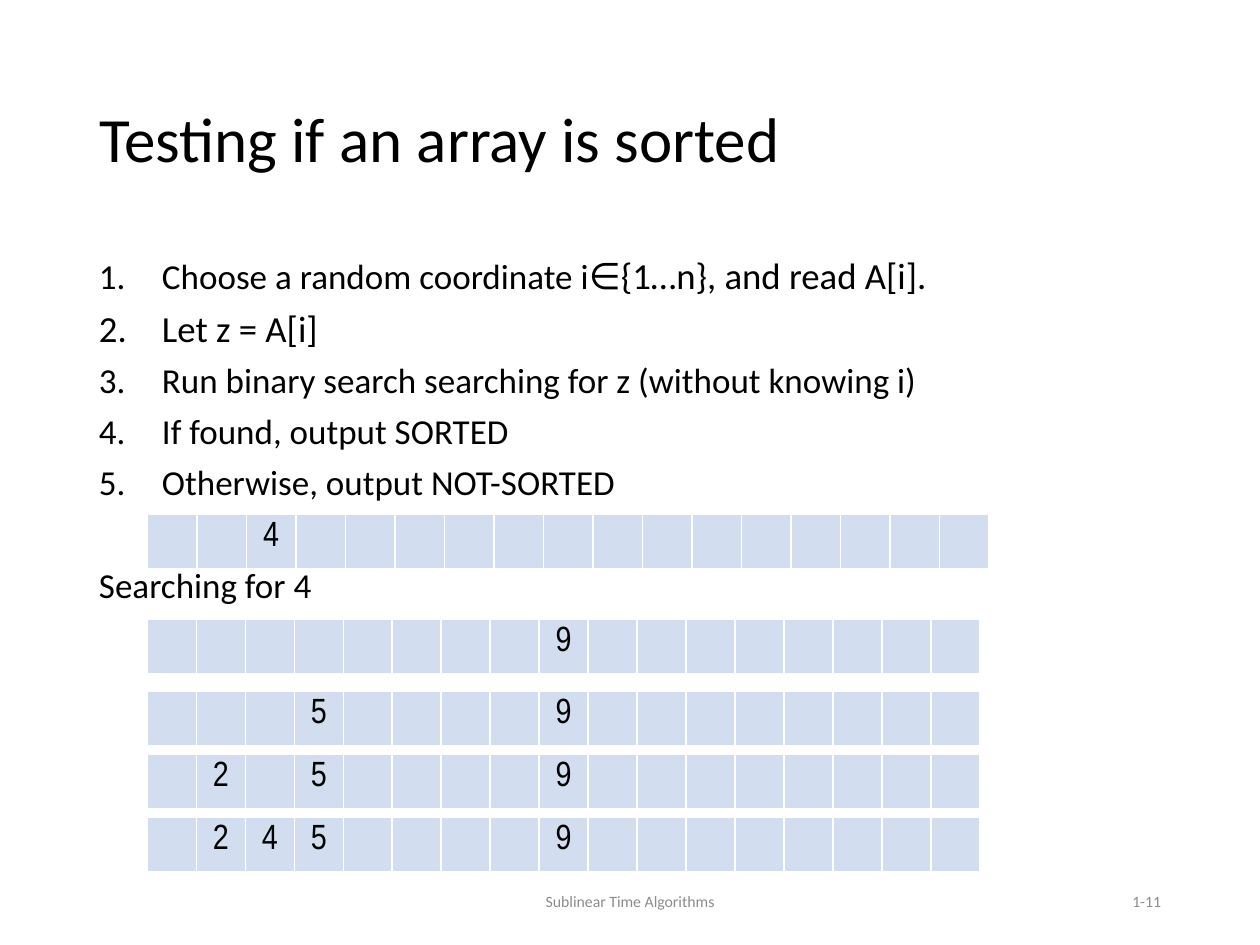
import pptx
import pptx.util
import pptx.dml.color
import pptx.enum.text
import pptx.oxml
import pptx.oxml.ns
from lxml import etree

Pt = pptx.util.Pt
ALIGN = pptx.enum.text.PP_ALIGN
ANCHOR = pptx.enum.text.MSO_ANCHOR
COLORS = {"text": "000000", "footer": "8C8C8C", "cell": "D2DEEF", "border": "FFFFFF"}
CELL_COUNT = 17
STEPS = [
    [("Choose a random coordinate i", 20), ("∈{1…n}, and read A[i].", 21)],
    [("Let z = A[i]", 21)],
    [("Run binary search searching for z (without knowing i)", 20)],
    [("If found, output SORTED", 20)],
    [("Otherwise, output NOT-SORTED", 20)],
]
ARRAYS = [
    (294, 28.3, {2: "4"}),
    (354, 28, {8: "9"}),
    (395, 28, {3: "5", 8: "9"}),
    (431, 28, {1: "2", 3: "5", 8: "9"}),
    (467, 28, {1: "2", 2: "4", 3: "5", 8: "9"}),
]


def rgb(name):
    return pptx.dml.color.RGBColor.from_string(COLORS[name])


def style_font(font, size, color="text", name="Calibri"):
    font.name = name
    font.size = Pt(size)
    font.color.rgb = rgb(color)


def add_text_box(page, left, top, width, height):
    box = page.shapes.add_textbox(Pt(left), Pt(top), Pt(width), Pt(height))
    box.text_frame.word_wrap = True
    return box.text_frame


def place_title(page, left, top, width, height):
    title = page.shapes.title
    title.left, title.top, title.width, title.height = map(Pt, (left, top, width, height))
    title.text_frame.text = "Testing if an array is sorted"
    title.text_frame.vertical_anchor = ANCHOR.MIDDLE
    para = title.text_frame.paragraphs[0]
    para.alignment = ALIGN.LEFT
    para.line_spacing = 0.9
    style_font(para.font, 36)


def number_paragraph(para):
    properties = para._p.get_or_add_pPr()
    properties.set("marL", str(Pt(36)))
    properties.set("indent", str(-Pt(36)))
    numbering = etree.SubElement(properties, pptx.oxml.ns.qn("a:buAutoNum"))
    numbering.set("type", "arabicPeriod")


def add_steps(page, left, top, width, height):
    frame = add_text_box(page, left, top, width, height)
    for index, pieces in enumerate(STEPS + [[("Searching for 4", 20)]]):
        para = frame.add_paragraph() if index else frame.paragraphs[0]
        para.line_spacing = 0.9
        numbered = index < len(STEPS)
        para.space_before = Pt(7.5 if numbered else 37)
        if numbered:
            number_paragraph(para)
        for text, size in pieces:
            span = para.add_run()
            span.text = text
            style_font(span.font, size)


def add_border(cell):
    properties = cell._tc.get_or_add_tcPr()
    for position, side in enumerate(("lnL", "lnR", "lnT", "lnB")):
        line = pptx.oxml.parse_xml(
            f'<a:{side} {pptx.oxml.ns.nsdecls("a")} w="{Pt(1)}"><a:solidFill>'
            f'<a:srgbClr val="{COLORS["border"]}"/></a:solidFill></a:{side}>'
        )
        properties.insert(position, line)


def add_array(page, left, top, cell_width, height, values):
    frame = page.shapes.add_table(
        1, CELL_COUNT, Pt(left), Pt(top), Pt(cell_width * CELL_COUNT), Pt(height)
    )
    table = frame.table
    table.first_row = False
    table.horz_banding = False
    for index, column in enumerate(table.columns):
        column.width = Pt(cell_width)
        cell = table.cell(0, index)
        cell.fill.solid()
        cell.fill.fore_color.rgb = rgb("cell")
        add_border(cell)
        if index in values:
            cell.text = values[index]
            para = cell.text_frame.paragraphs[0]
            para.alignment = ALIGN.CENTER
            style_font(para.font, 20, name="Arial Narrow")


def add_footer(page, left, top, width, height, text, alignment):
    frame = add_text_box(page, left, top, width, height)
    frame.vertical_anchor = ANCHOR.MIDDLE
    para = frame.paragraphs[0]
    para.text = text
    para.alignment = alignment
    style_font(para.font, 9, "footer")


def main():
    deck = pptx.Presentation()
    deck.slide_width, deck.slide_height = Pt(720), Pt(540)
    page = deck.slides.add_slide(deck.slide_layouts[5])
    place_title(page, 49.5, 28.75, 621, 104.4)
    add_steps(page, 49.5, 143.75, 621, 342.6)
    for top, cell_width, values in ARRAYS:
        add_array(page, 84.25, top, cell_width, 31, values)
    add_footer(page, 238.5, 500.5, 243, 28.75, "Sublinear Time Algorithms", ALIGN.CENTER)
    add_footer(page, 508.5, 500.5, 162, 28.75, "1-11", ALIGN.RIGHT)
    deck.save("out.pptx")


if __name__ == "__main__":
    main()
